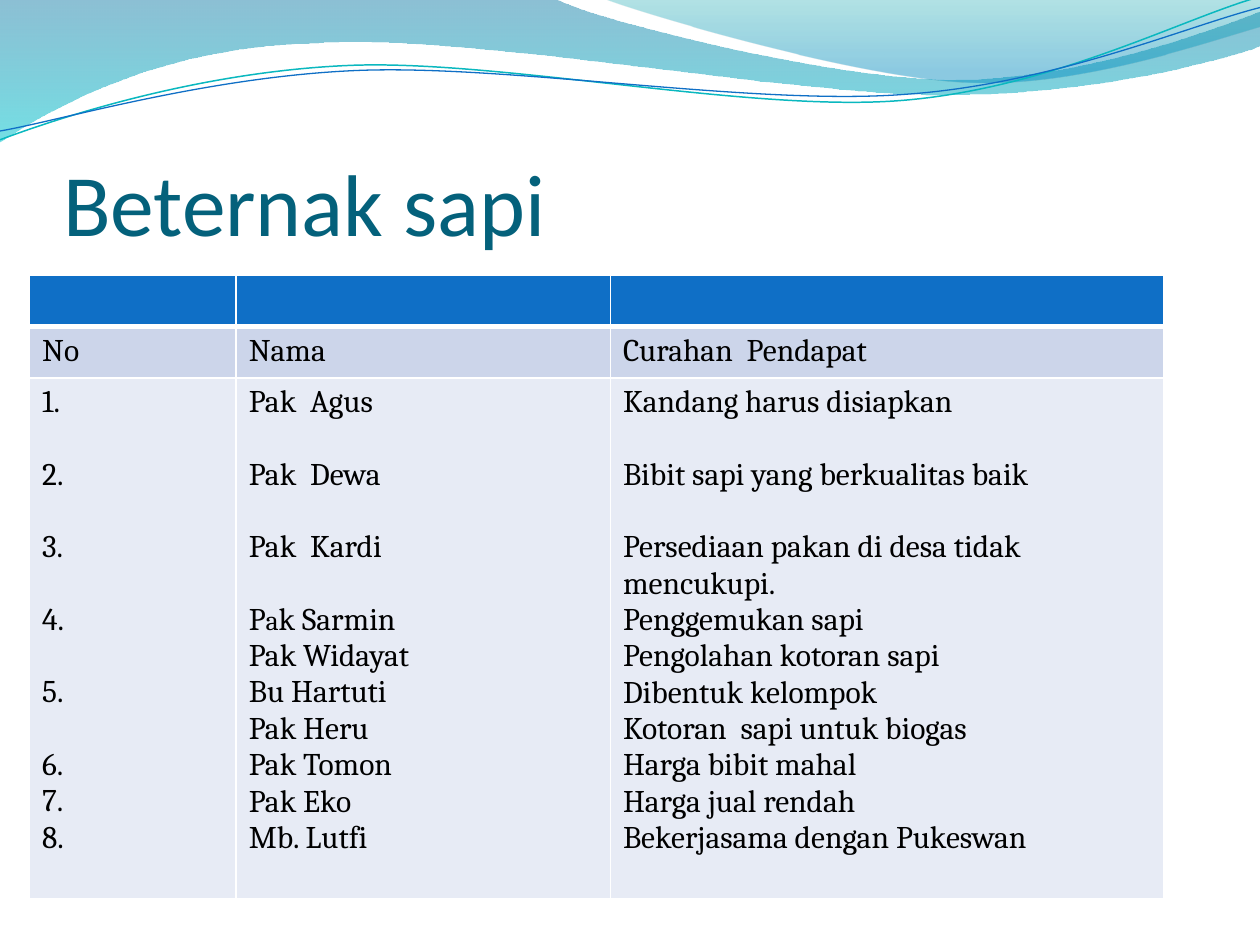
import pptx
import pptx.dml.color
import pptx.enum.text
import pptx.oxml
import pptx.oxml.ns
import pptx.util

COLORS = {"title": "04617B", "text": "000000", "border": "FFFFFF",
          "header": "0F6FC6", "band": "CCD5EA", "body": "E7EBF5",
          "teal": "0AB8BF", "blue": "0F6FC6",
          "deep": "0074A1", "aqua": "00C6CF", "sea": "00A1A9", "sky": "008BBF"}
COLS, ROWS = 100, 75
NS = pptx.oxml.ns.nsdecls("a")


def rgb(name):
    return pptx.dml.color.RGBColor.from_string(COLORS[name])


class Deck:
    """Style and current slide, measured on a grid of COLS by ROWS."""

    def __init__(self):
        self.prs = pptx.Presentation()
        self.prs.slide_width = pptx.util.Inches(10)
        self.prs.slide_height = pptx.util.Inches(7.5)
        self.slide = self.prs.slides.add_slide(self.prs.slide_layouts[5])

    def x(self, col):
        return round(self.prs.slide_width * col / COLS)

    def y(self, row):
        return round(self.prs.slide_height * row / ROWS)

    def style(self, run, font, size, color):
        run.font.name = font
        run.font.size = pptx.util.Pt(size)
        run.font.color.rgb = rgb(color)

    def outline(self, start, segments, closed):
        points = [(self.x(px), self.y(py)) for seg in segments
                  for px, py in zip(seg[::2], seg[1::2])]
        builder = self.slide.shapes.build_freeform(self.x(start[0]), self.y(start[1]))
        builder.add_line_segments(points, close=closed)
        sp = builder.convert_to_shape()
        sp.shadow.inherit = False
        lines = iter(list(sp._element.iter(pptx.oxml.ns.qn("a:lnTo"))))
        for seg in segments:
            first = next(lines)
            if len(seg) == 6:
                bezier = pptx.oxml.parse_xml(f"<a:cubicBezTo {NS}/>")
                first.addprevious(bezier)
                for line in (first, next(lines), next(lines)):
                    bezier.append(line[0])
                    line.getparent().remove(line)
        return sp

    def wave(self, start, segments, stops):
        sp = self.outline(start, segments, True)
        sp.line.fill.background()
        sp.fill.gradient()
        sp.fill.gradient_angle = 270
        for stop, (position, color, _) in zip(sp.fill.gradient_stops, stops):
            stop.position = position
            stop.color.rgb = rgb(color)
        colors = sp.fill._xPr.iter(pptx.oxml.ns.qn("a:srgbClr"))
        for clr, (_, _, opacity) in zip(colors, stops):
            clr.append(pptx.oxml.parse_xml(f'<a:alpha {NS} val="{opacity * 1000}"/>'))

    def curve(self, start, segments, color, width):
        sp = self.outline(start, segments, False)
        sp.fill.background()
        sp.line.color.rgb = rgb(color)
        sp.line.width = pptx.util.Pt(width)

    def title(self, text, col, row, width, height):
        sp = self.slide.shapes.title
        sp._element.getparent().append(sp._element)
        sp.left, sp.top = self.x(col), self.y(row)
        sp.width, sp.height = self.x(width), self.y(height)
        tf = sp.text_frame
        tf.text = text
        tf.auto_size = pptx.enum.text.MSO_AUTO_SIZE.NONE
        tf.vertical_anchor = pptx.enum.text.MSO_ANCHOR.BOTTOM
        tf.margin_left = tf.margin_right = tf.margin_bottom = 0
        p = tf.paragraphs[0]
        p.alignment = pptx.enum.text.PP_ALIGN.LEFT
        self.style(p.runs[0], "Calibri", 50, "title")

    def cell(self, cell, lines, gaps, fill, top, bottom):
        cell.fill.solid()
        cell.fill.fore_color.rgb = rgb(fill)
        tcPr = cell._tc.get_or_add_tcPr()
        for i, (side, width) in enumerate(zip("LRTB", (1, 1, top, bottom))):
            tcPr.insert(i, pptx.oxml.parse_xml(
                f'<a:ln{side} {NS} w="{width * 12700}"><a:solidFill>'
                f'<a:srgbClr val="{COLORS["border"]}"/></a:solidFill></a:ln{side}>'))
        tf = cell.text_frame
        for i, line in enumerate(lines):
            p = tf.add_paragraph() if i else tf.paragraphs[0]
            if 0 < i <= gaps:
                p.space_before = pptx.util.Pt(20.7)
            for j, part in enumerate(line.split("|")):
                r = p.add_run()
                r.text = part
                self.style(r, "Cambria", 16 if j == 1 else 18, "text")

    def table(self, col, row, widths, heights, rows, fills, gaps):
        frame = self.slide.shapes.add_table(
            len(heights), len(widths), self.x(col), self.y(row),
            self.x(sum(widths)), self.y(sum(heights)))
        table = frame.table
        for column, width in zip(table.columns, widths):
            column.width = self.x(width)
        for i, (cells, fill) in enumerate(zip(rows, fills)):
            table.rows[i].height = self.y(heights[i])
            for j, lines in enumerate(cells):
                self.cell(table.cell(i, j), lines, gaps[j], fill,
                          3 if i == 1 else 1, 3 if i == 0 else 1)


def main():
    deck = Deck()
    deck.wave((0, 0), [(44, -0.1), (47.6, 1.7, 66.4, 6.3, 75.8, 6.3),
                       (85.3, 6.3, 95.8, 2.6, 100, 0.9), (100.1, 3.6),
                       (98.3, 4.4, 87, 7.6, 74.6, 7.5),
                       (62.2, 7.5, 38.2, 2.8, 25.7, 3.4),
                       (12.9, 3.6, 4.6, 8.3, -0.1, 11.3)],
              [(0, "deep", 45), (1, "aqua", 55)])
    deck.wave((47.9, -0.1), [(50.9, 1.1, 68.2, 6.2, 76.9, 6.5),
                             (85.6, 6.9, 96.1, 3.2, 100, 2.1), (100, 0)],
              [(0, "sea", 30), (0.8, "sky", 45)])
    deck.curve((0, 11.1), [(4.8, 9.3, 15.8, 5.7, 27.7, 5.2),
                           (39.5, 4.7, 59.3, 8.9, 71.3, 8),
                           (83.3, 7.1, 93.8, 1.5, 99.8, -0.2)], "teal", 0.85)
    deck.curve((0, 10.4), [(4.7, 9.6, 16.4, 6.1, 28.3, 5.6),
                           (40.3, 5.1, 59.7, 8.4, 71.7, 7.5),
                           (83.6, 6.7, 94.1, 2.1, 100, 0.6)], "blue", 0.75)
    deck.title("Beternak sapi", 5, 7.7, 90, 12.5)

    numbers = [f"{n}." for n in range(1, 9)]
    names = ["Pak  Agus", "Pak  Dewa", "Pak  Kardi", "P|a|k Sarmin", "Pak Widayat",
             "Bu Hartuti", "Pak Heru", "Pak Tomon", "Pak Eko", "Mb. Lutfi"]
    opinions = ["Kandang harus disiapkan", "Bibit sapi yang berkualitas baik",
                "Persediaan pakan di desa tidak mencukupi.", "Penggemukan sapi",
                "Pengolahan kotoran sapi", "Dibentuk kelompok",
                "Kotoran  sapi untuk biogas", "Harga bibit mahal",
                "Harga jual rendah", "Bekerjasama dengan Pukeswan"]
    deck.table(2.35, 21.87, [16.4, 29.7, 43.9], [4.06, 4.06, 41.35],
               [[[], [], []], [["No"], ["Nama"], ["Curahan  Pendapat"]],
                [numbers, names, opinions]],
               ["header", "band", "body"], gaps=[5, 3, 2])
    deck.prs.save("out.pptx")


if __name__ == "__main__":
    main()
